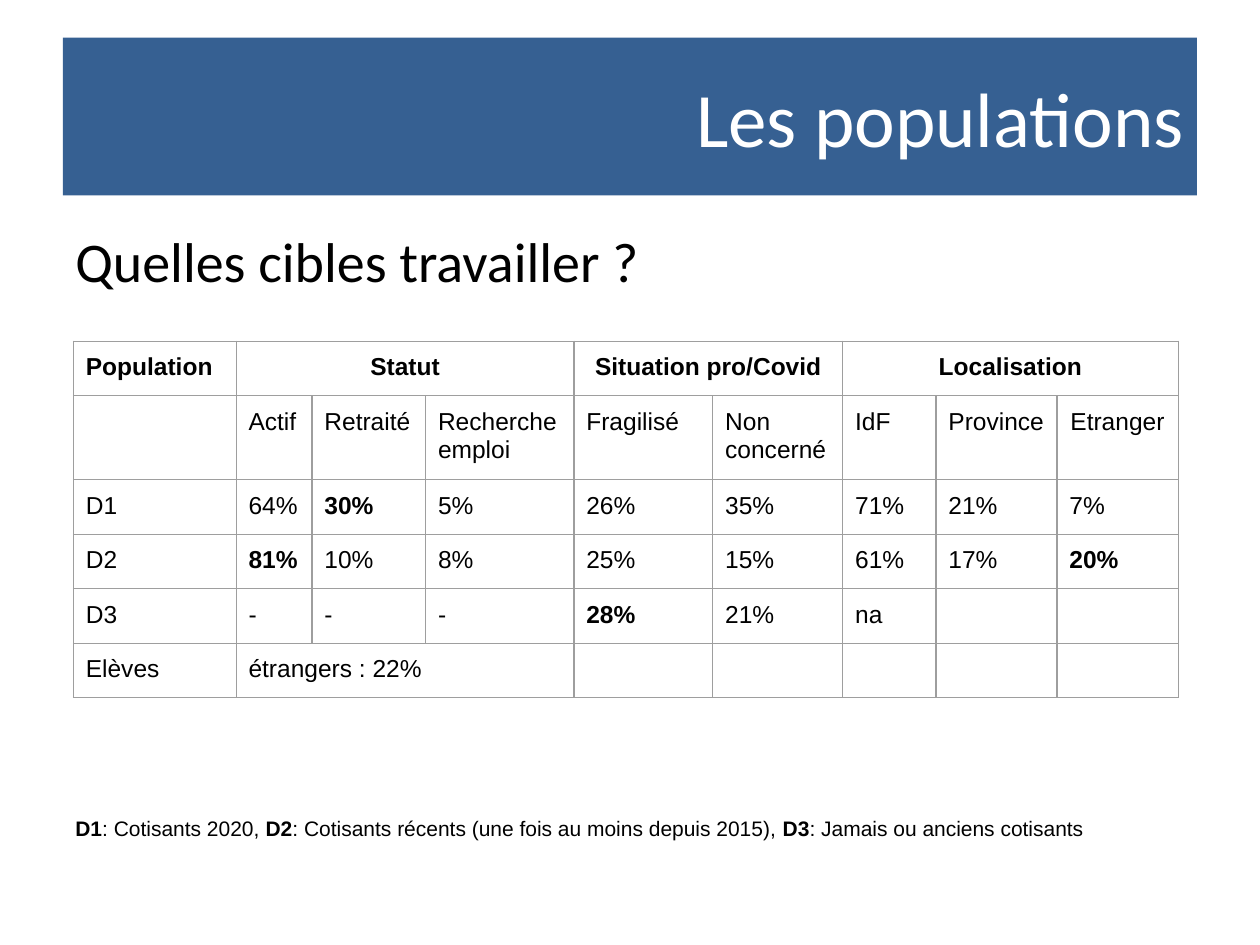
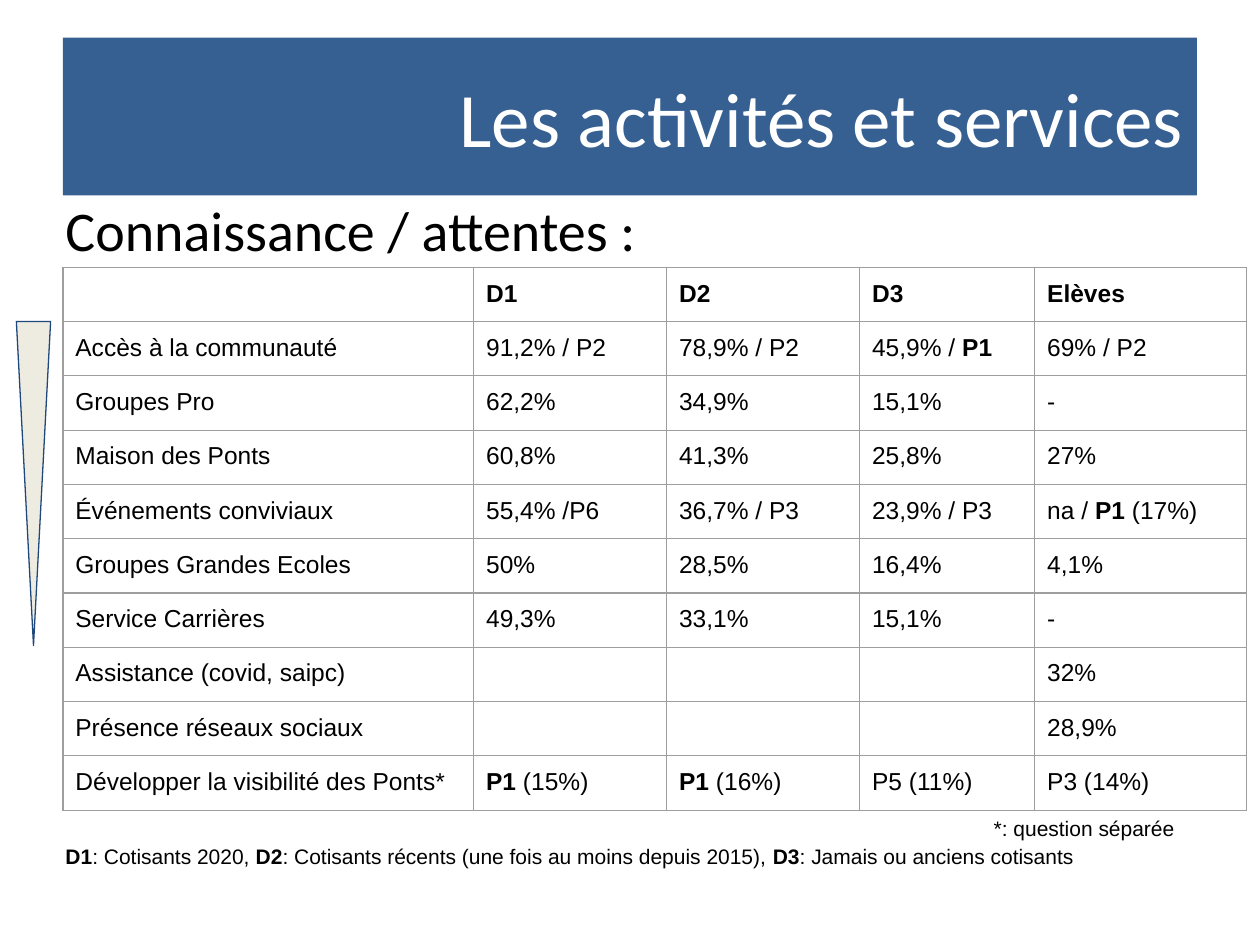
from lxml.etree import SubElement
from pptx import Presentation
from pptx.dml.color import RGBColor
from pptx.enum.shapes import MSO_SHAPE as Shape
from pptx.enum.text import MSO_ANCHOR as Anchor, PP_ALIGN as Align
from pptx.oxml.ns import qn
from pptx.util import Cm, Pt

BAND = RGBColor(0x36, 0x60, 0x92)
WHITE = RGBColor(0xFF, 0xFF, 0xFF)
BLACK = RGBColor(0, 0, 0)
WEDGE_FILL = RGBColor(0xEE, 0xEC, 0xE1)
WEDGE_LINE = RGBColor(0x1F, 0x49, 0x7D)
GRID = RGBColor(0x9E, 0x9E, 0x9E)
HEAD_FONT, TEXT_FONT = "Calibri", "Arial"
BOLD = "**"

LEGEND = ("**D1**: Cotisants 2020,** D2**: Cotisants récents (une fois au moins depuis 2015),"
          "** D3**: Jamais ou anciens cotisants")

POPULATIONS = dict(
    title="Les populations",
    heading="Quelles cibles travailler ?",
    body_at=(1.27, 4.45),
    notes=[(LEGEND, Align.LEFT)],
    table_at=(1.48, 6.88),
    cols=[3.28, 1.53, 2.29, 2.99, 2.8, 2.62, 1.88, 2.44, 2.44],
    row_heights=[1.1, 1.62] + [1.1] * 4,
    spans={(0, 1): 3, (0, 4): 2, (0, 6): 3, (5, 1): 3},
    centred=[(0, 1), (0, 4), (0, 6), (1, 8)],
    rows=[
        ["**Population**", "**Statut**", "", "", "**Situation pro/Covid**", "", "**Localisation**", "", ""],
        ["", "Actif", "Retraité", "Recherche emploi", "Fragilisé", "Non concerné", "IdF", "Province", "Etranger"],
        ["D1", "64%", "**30%**", "5%", "26%", "35%", "71%", "21%", "7%"],
        ["D2", "**81%**", "10%", "8%", "25%", "15%", "61%", "17%", "**20%**"],
        ["D3", "-", "-", "-", "**28%**", "21%", "na", "", ""],
        ["Elèves", "étrangers : 22%", "", "", "", "", "", "", ""],
    ],
)

SERVICES = dict(
    title="Les activités et services",
    heading="Connaissance / attentes :",
    body_at=(1.07, 3.81),
    notes=[("*: question séparée", Align.RIGHT), (LEGEND, Align.LEFT)],
    table_at=(1.27, 5.39),
    cols=[8.28, 3.89, 3.89, 3.53, 4.27],
    row_heights=[1.07] * 10,
    spans={},
    centred=[],
    rows=[
        ["", "**D1**", "**D2**", "**D3**", "**Elèves**"],
        ["Accès à la communauté", "91,2% / P2", "78,9% / P2", "45,9% / **P1**", "69% / P2"],
        ["Groupes Pro", "62,2%", "34,9%", "15,1%", "-"],
        ["Maison des Ponts", "60,8%", "41,3%", "25,8%", "27%"],
        ["Événements conviviaux", "55,4% /P6", "36,7% / P3", "23,9% / P3", "na / **P1** (17%)"],
        ["Groupes Grandes Ecoles", "50%", "28,5%", "16,4%", "4,1%"],
        ["Service Carrières", "49,3%", "33,1%", "15,1%", "-"],
        ["Assistance (covid, saipc)", "", "", "", "32%"],
        ["Présence réseaux sociaux", "", "", "", "28,9%"],
        ["Développer la visibilité des Ponts*", "**P1 **(15%)", "**P1 **(16%)", "P5 (11%)", "P3 (14%)"],
    ],
)

BODY_WIDTH = 22.86
NOTES_TOP = 16.23


def add_runs(p, text, font, size, color=BLACK, align=Align.LEFT):
    p.alignment = align
    for i, part in enumerate(text.split(BOLD)):
        if part:
            r = p.add_run()
            r.text = part
            r.font.name, r.font.size = font, Pt(size)
            r.font.bold = i % 2 == 1
            r.font.color.rgb = color


def add_band(slide, title):
    sp = slide.shapes.add_shape(Shape.RECTANGLE, Cm(1.27), Cm(0.76), Cm(BODY_WIDTH), Cm(3.18))
    sp.shadow.inherit = False
    sp.fill.solid()
    sp.fill.fore_color.rgb = BAND
    sp.line.fill.background()
    tf = sp.text_frame
    tf.word_wrap, tf.vertical_anchor = True, Anchor.MIDDLE
    add_runs(tf.paragraphs[0], title, HEAD_FONT, 44, WHITE, Align.RIGHT)


def add_text(slide, left, top, height):
    tf = slide.shapes.add_textbox(Cm(left), Cm(top), Cm(BODY_WIDTH), Cm(height)).text_frame
    tf.word_wrap = True
    return tf


def add_notes(slide, left, notes):
    tf = add_text(slide, left, NOTES_TOP, 0.6 * len(notes) + 0.25)
    for i, (text, align) in enumerate(notes):
        p = tf.add_paragraph() if i else tf.paragraphs[0]
        p.line_spacing = 1.15
        add_runs(p, text, TEXT_FONT, 12, align=align)


def style_cell(cell):
    tc_pr = cell._tc.get_or_add_tcPr()
    for side in ("lnL", "lnR", "lnT", "lnB"):
        ln = SubElement(tc_pr, qn(f"a:{side}"), w=str(Pt(0.75)))
        fill = SubElement(ln, qn("a:solidFill"))
        SubElement(fill, qn("a:srgbClr"), val=str(GRID))
    cell.fill.background()
    cell.margin_left = cell.margin_right = cell.margin_top = cell.margin_bottom = Cm(0.25)


def add_grid(slide, content):
    rows, cols, heights = content["rows"], content["cols"], content["row_heights"]
    left, top = content["table_at"]
    table = slide.shapes.add_table(len(rows), len(cols), Cm(left), Cm(top),
                                   Cm(sum(cols)), Cm(sum(heights))).table
    table.first_row = table.horz_banding = False
    for column, width in zip(table.columns, cols):
        column.width = Cm(width)
    for row, height in zip(table.rows, heights):
        row.height = Cm(height)
    for i, row in enumerate(rows):
        for j, text in enumerate(row):
            cell = table.cell(i, j)
            style_cell(cell)
            p = cell.text_frame.paragraphs[0]
            align = Align.CENTER if (i, j) in content["centred"] else Align.LEFT
            add_runs(p, text, TEXT_FONT, 14, align=align)
            if not text:
                SubElement(p._p, qn("a:endParaRPr"), sz="1400")
    for (i, j), span in content["spans"].items():
        table.cell(i, j).merge(table.cell(i, j + span - 1))


def add_wedge(slide):
    sp = slide.shapes.add_shape(Shape.ISOSCELES_TRIANGLE, Cm(0.33), Cm(6.48), Cm(0.69), Cm(6.53))
    sp.rotation = 180
    sp.shadow.inherit = False
    sp.fill.solid()
    sp.fill.fore_color.rgb = WEDGE_FILL
    sp.line.color.rgb = WEDGE_LINE
    sp.line.width = Pt(0.75)


def add_slide(prs, content):
    slide = prs.slides.add_slide(prs.slide_layouts[6])
    left, top = content["body_at"]
    add_band(slide, content["title"])
    heading = add_text(slide, left, top, 1.6)
    add_runs(heading.paragraphs[0], content["heading"], HEAD_FONT, 32)
    add_grid(slide, content)
    add_notes(slide, left, content["notes"])
    return slide


def main():
    prs = Presentation()
    prs.slide_width, prs.slide_height = Cm(25.4), Cm(19.05)
    add_slide(prs, POPULATIONS)
    add_wedge(add_slide(prs, SERVICES))
    prs.save("out.pptx")


if __name__ == "__main__":
    main()
